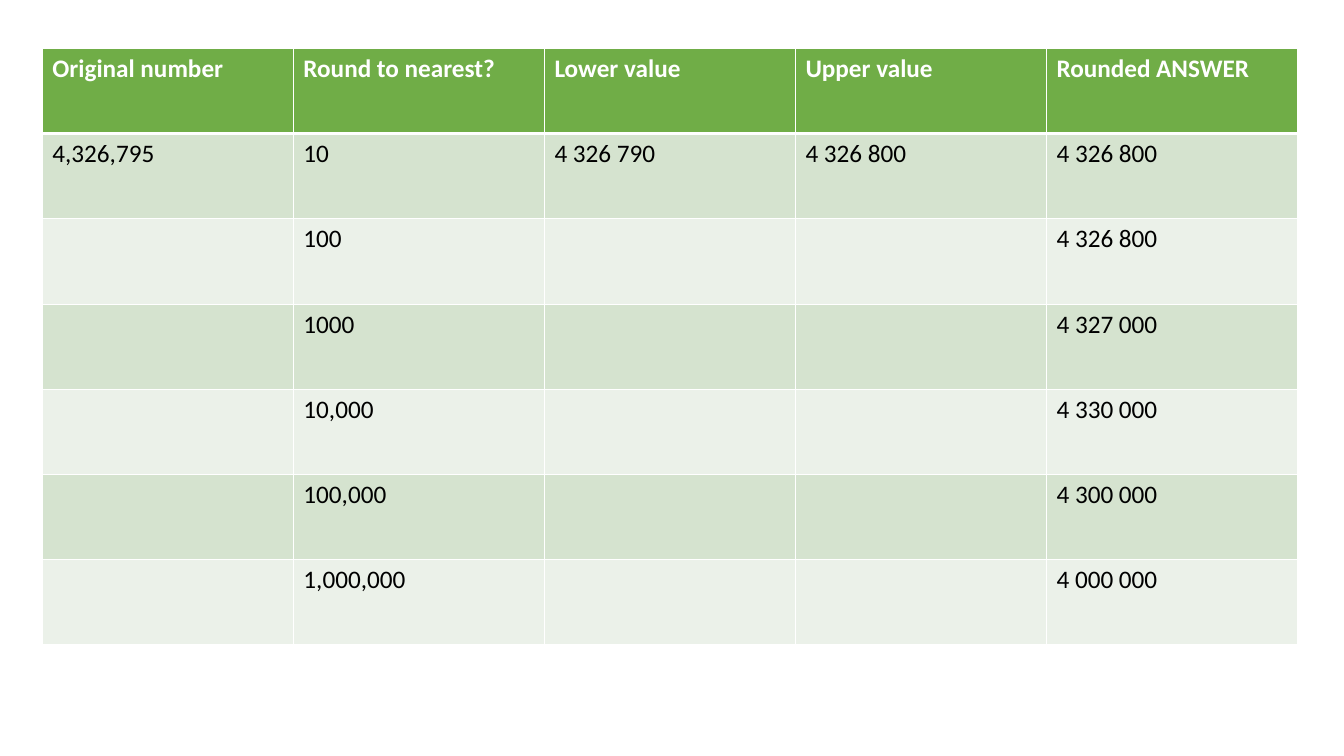
from lxml import etree
from pptx import Presentation
from pptx.dml.color import RGBColor
from pptx.oxml.ns import qn
from pptx.util import Inches, Pt

FONT = "Calibri"
WHITE, BLACK, GREEN = "FFFFFF", "000000", "70AD47"
BANDS = ["D5E3CF", "EBF1E9"]
HEADERS = ["Original number", "Round to nearest?", "Lower value",
           "Upper value", "Rounded ANSWER"]
ROWS = [
    ["4,326,795", "10", "4 326 790", "4 326 800", "4 326 800"],
    ["", "100", "", "", "4 326 800"],
    ["", "1000", "", "", "4 327 000"],
    ["", "10,000", "", "", "4 330 000"],
    ["", "100,000", "", "", "4 300 000"],
    ["", "1,000,000", "", "", "4 000 000"],
]


def rgb(color):
    return RGBColor.from_string(color)


def set_borders(cell, top, bottom):
    tcPr = cell._tc.get_or_add_tcPr()
    for side, width in (("L", 1), ("R", 1), ("T", top), ("B", bottom)):
        ln = etree.SubElement(tcPr, qn(f"a:ln{side}"), w=str(Pt(width)))
        fill = etree.SubElement(ln, qn("a:solidFill"))
        etree.SubElement(fill, qn("a:srgbClr"), val=WHITE)


def fill_cell(cell, text, fill, color, bold):
    cell.fill.solid()
    cell.fill.fore_color.rgb = rgb(fill)
    cell.text_frame.text = text
    p = cell.text_frame.paragraphs[0]
    for font in [p.font] + [r.font for r in p.runs]:
        font.name = FONT
        font.size = Pt(18)
        font.bold = bold
        font.color.rgb = rgb(color)


def add_rounding_table(s, left, top, width, height):
    data = [HEADERS] + ROWS
    table = s.shapes.add_table(len(data), len(HEADERS),
                               left, top, width, height).table
    for i, row in enumerate(data):
        header = i == 0
        fill = GREEN if header else BANDS[(i - 1) % 2]
        for j, text in enumerate(row):
            cell = table.cell(i, j)
            set_borders(cell, 3 if i == 1 else 1, 3 if header else 1)
            fill_cell(cell, text, fill, WHITE if header else BLACK, header)


def main():
    prs = Presentation()
    prs.slide_width, prs.slide_height = Inches(13.33), Inches(7.5)
    s = prs.slides.add_slide(prs.slide_layouts[6])
    add_rounding_table(s, Inches(0.42), Inches(0.48),
                       Inches(12.45), Inches(5.92))
    prs.save("out.pptx")


if __name__ == "__main__":
    main()
